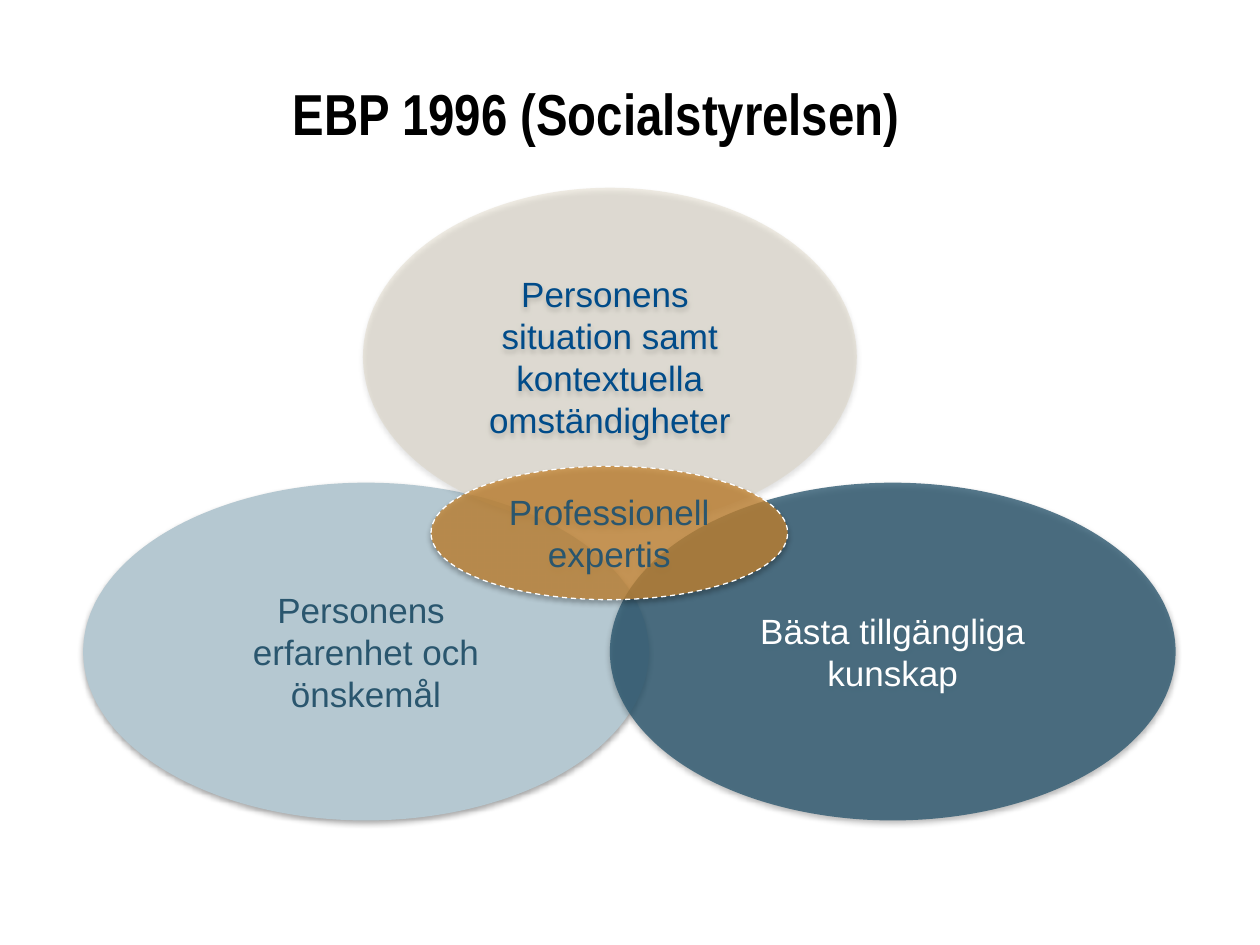
from dataclasses import dataclass

from lxml.etree import SubElement
from pptx import Presentation
from pptx.dml.color import RGBColor
from pptx.enum.dml import MSO_LINE
from pptx.enum.shapes import MSO_SHAPE
from pptx.enum.text import MSO_ANCHOR, PP_ALIGN
from pptx.oxml.ns import qn
from pptx.slide import Slide
from pptx.util import Pt

COLORS = {
    "light blue": "B5C8D1",
    "petrol": "2A566E",
    "sand": "D4C9B0",
    "ochre": "C78734",
    "blue": "004B89",
    "white": "FFFFFF",
    "black": "000000",
}


@dataclass
class Oval:
    """One field of the model; lengths in points, opacity in percent."""
    text: str
    left: float
    top: float
    width: float
    height: float
    fill: str
    text_color: str
    opacity: int = 100
    dashed: bool = False


OVALS = [
    Oval("Personens \nerfarenhet och önskemål", 47.5, 275.8, 323.3, 193,
         "light blue", "petrol"),
    Oval("Bästa tillgängliga kunskap", 348.5, 275.8, 323.3, 193,
         "petrol", "white", opacity=78),
    Oval("Personens \nsituation samt kontextuella omständigheter", 207.4, 107.3, 282.2, 193,
         "sand", "blue", opacity=33),
    Oval("Professionell expertis", 246.3, 266.4, 203.8, 76.3,
         "ochre", "petrol", opacity=76, dashed=True),
]


def color(name: str) -> RGBColor:
    return RGBColor.from_string(COLORS[name])


def set_opacity(color_element, percent: int) -> None:
    SubElement(color_element, qn("a:alpha"), val=str(percent * 1000))


def add_soft_shadow(shape) -> None:
    shape.shadow.inherit = False
    effects = shape._element.spPr.find(qn("a:effectLst"))
    shadow = SubElement(effects, qn("a:outerShdw"), blurRad=str(Pt(3.1)), dist=str(Pt(1.8)),
                        dir=str(90 * 60000), rotWithShape="0")
    set_opacity(SubElement(shadow, qn("a:srgbClr"), val=COLORS["black"]), 35)


def add_oval(slide: Slide, oval: Oval) -> None:
    shape = slide.shapes.add_shape(MSO_SHAPE.OVAL, Pt(oval.left), Pt(oval.top),
                                   Pt(oval.width), Pt(oval.height))
    shape.fill.solid()
    shape.fill.fore_color.rgb = color(oval.fill)
    if oval.opacity < 100:
        fill = shape._element.spPr.find(qn("a:solidFill"))
        set_opacity(fill.find(qn("a:srgbClr")), oval.opacity)
    if oval.dashed:
        shape.line.color.rgb = color("white")
        shape.line.width = Pt(0.75)
        shape.line.dash_style = MSO_LINE.DASH
    else:
        shape.line.fill.background()
    add_soft_shadow(shape)

    frame = shape.text_frame
    frame.word_wrap = True
    frame.vertical_anchor = MSO_ANCHOR.MIDDLE
    frame.margin_left = frame.margin_right = Pt(12)
    frame.text = oval.text
    for paragraph in frame.paragraphs:
        paragraph.alignment = PP_ALIGN.CENTER
        paragraph.font.name = "Arial"
        paragraph.font.size = Pt(20)
        paragraph.font.color.rgb = color(oval.text_color)


def set_title(slide: Slide, text: str) -> None:
    title = slide.shapes.title
    title.left, title.top, title.width, title.height = Pt(160), Pt(45.4), Pt(623.5), Pt(62.6)
    frame = title.text_frame
    frame.text = text
    frame.vertical_anchor = MSO_ANCHOR.TOP
    paragraph = frame.paragraphs[0]
    paragraph.alignment = PP_ALIGN.LEFT
    paragraph.line_spacing = 0.9
    paragraph.font.name = "Arial Narrow"
    paragraph.font.size = Pt(33)
    paragraph.font.bold = True
    paragraph.font.color.rgb = color("black")


def main() -> None:
    presentation = Presentation()
    presentation.slide_width, presentation.slide_height = Pt(720), Pt(540)
    slide = presentation.slides.add_slide(presentation.slide_layouts[5])
    set_title(slide, "EBP 1996 (Socialstyrelsen)")
    for oval in OVALS:
        add_oval(slide, oval)
    presentation.save("out.pptx")


if __name__ == "__main__":
    main()
